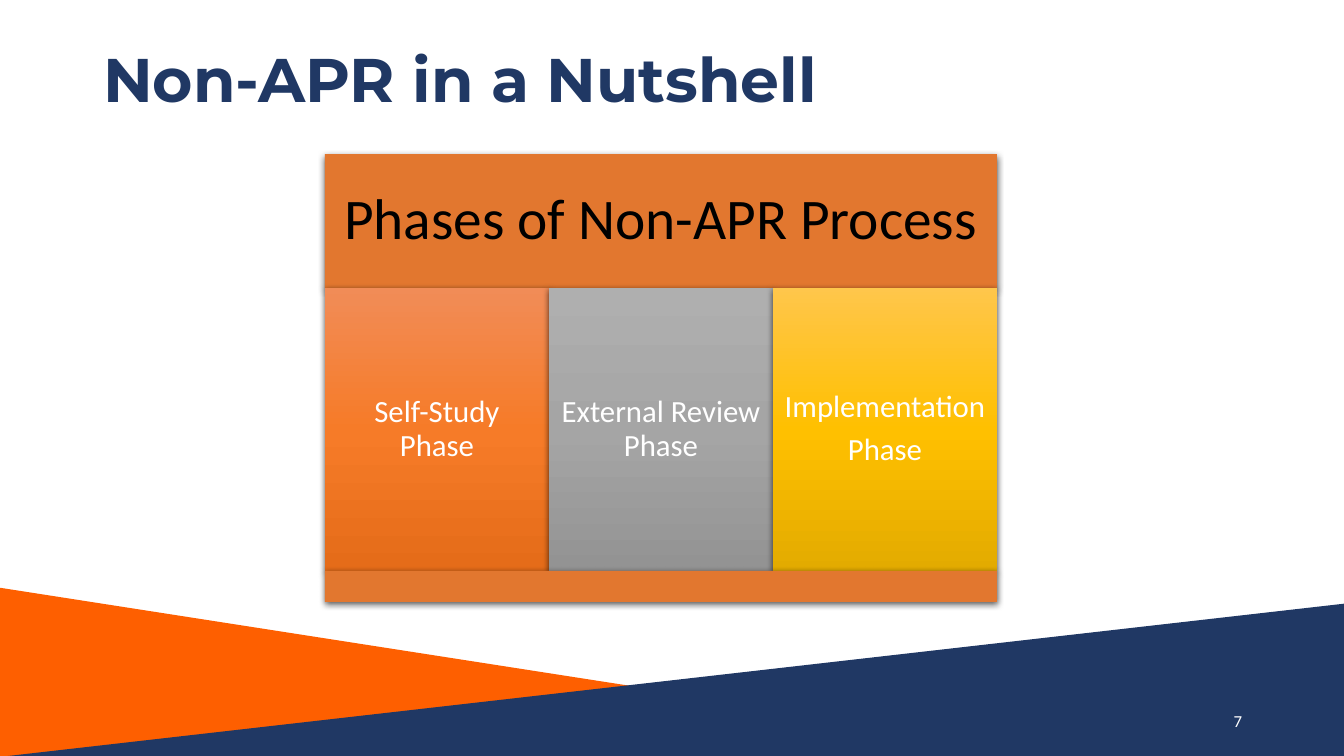
from copy import deepcopy

from lxml import etree
from pptx import Presentation
from pptx import util as u
from pptx.dml.color import RGBColor
from pptx.enum import shapes, text
from pptx.oxml import ns

PX = 914400 / 100.8

WHITE = RGBColor(0xFF, 0xFF, 0xFF)
BLACK = RGBColor(0x00, 0x00, 0x00)
NAVY = RGBColor(0x20, 0x38, 0x64)
ORANGE = RGBColor(0xFE, 0x5F, 0x00)
BAND = RGBColor(0xE2, 0x77, 0x2F)
ORANGE_FADE = (RGBColor(0xF1, 0x8C, 0x57), RGBColor(0xF6, 0x7B, 0x28), RGBColor(0xE5, 0x6C, 0x19))
GRAY_FADE = (RGBColor(0xAF, 0xAF, 0xAF), RGBColor(0xA5, 0xA5, 0xA5), RGBColor(0x93, 0x93, 0x93))
GOLD_FADE = (RGBColor(0xFF, 0xC6, 0x4B), RGBColor(0xFF, 0xC0, 0x00), RGBColor(0xE3, 0xAB, 0x00))

PHASES = [
    ("Self-Study Phase", ORANGE_FADE),
    ("External Review Phase", GRAY_FADE),
    ("Implementation\nPhase", GOLD_FADE),
]
PANEL_LEFT, PANEL_TOP, PANEL_WIDTH = 325, 154, 672
HEADER_HEIGHT, PHASE_HEIGHT, FOOTER_HEIGHT = 134, 283, 31


def px(*lengths):
    return [u.Emu(round(length * PX)) for length in lengths]


def set_font(font, name, size, color, bold=False):
    font.name = name
    font.size = u.Pt(size)
    font.color.rgb = color
    font.bold = bold


def add_triangle(slide, box, color, apex):
    triangle = slide.shapes.add_shape(shapes.MSO_SHAPE.ISOSCELES_TRIANGLE, *px(*box))
    triangle.adjustments[0] = apex
    triangle.fill.solid()
    triangle.fill.fore_color.rgb = color
    triangle.line.fill.background()
    triangle.shadow.inherit = False


def add_shadow(block):
    block.shadow.inherit = False
    effects = block._element.spPr.find(ns.qn("a:effectLst"))
    shadow = etree.SubElement(
        effects, ns.qn("a:outerShdw"),
        blurRad=str(u.Pt(4.5)), dist=str(u.Pt(1.5)), dir="5400000", algn="ctr", rotWithShape="0",
    )
    black = etree.SubElement(shadow, ns.qn("a:srgbClr"), val=str(BLACK))
    etree.SubElement(black, ns.qn("a:alpha"), val="63000")


def fill_fade(block, colors):
    block.fill.gradient()
    block.fill.gradient_angle = 270
    stop_list = block._element.spPr.find(".//" + ns.qn("a:gsLst"))
    stop_list.insert(1, deepcopy(stop_list[0]))
    for stop, position, color in zip(block.fill.gradient_stops, (0, 0.5, 1), colors):
        stop.position = position
        stop.color.rgb = color


def add_block(slide, box, colors):
    block = slide.shapes.add_shape(shapes.MSO_SHAPE.RECTANGLE, *px(*box))
    if len(colors) == 1:
        block.fill.solid()
        block.fill.fore_color.rgb = colors[0]
    else:
        fill_fade(block, colors)
    block.line.fill.background()
    add_shadow(block)
    return block


def write_label(block, wording, size, color, inset):
    frame = block.text_frame
    frame.word_wrap = True
    frame.vertical_anchor = text.MSO_ANCHOR.MIDDLE
    frame.margin_left = frame.margin_right = frame.margin_top = frame.margin_bottom = px(inset)[0]
    frame.text = wording
    for index, paragraph in enumerate(frame.paragraphs):
        paragraph.alignment = text.PP_ALIGN.CENTER
        paragraph.line_spacing = 0.9
        if index:
            paragraph.space_before = u.Pt(7)
        set_font(paragraph.runs[0].font, "Calibri", size, color)


def write_title(slide, wording):
    title = slide.shapes.title
    title.left, title.top, title.width, title.height = px(93, 10, 1159, 146)
    frame = title.text_frame
    frame.text = wording
    frame.word_wrap = True
    frame.vertical_anchor = text.MSO_ANCHOR.MIDDLE
    paragraph = frame.paragraphs[0]
    paragraph.alignment = text.PP_ALIGN.LEFT
    paragraph.line_spacing = 0.9
    set_font(paragraph.runs[0].font, "Montserrat", 44, NAVY, bold=True)


def add_page_number(slide, number):
    page = slide.shapes.add_textbox(*px(950, 701, 302, 40))
    page.text_frame.word_wrap = True
    page.text_frame.vertical_anchor = text.MSO_ANCHOR.MIDDLE
    paragraph = page.text_frame.paragraphs[0]
    paragraph.text = number
    paragraph.alignment = text.PP_ALIGN.RIGHT
    set_font(paragraph.runs[0].font, "Calibri", 12, WHITE)


def add_phases(slide):
    header = add_block(slide, (PANEL_LEFT, PANEL_TOP, PANEL_WIDTH, HEADER_HEIGHT), [BAND])
    write_label(header, "Phases of Non-APR Process", 41, BLACK, 17)
    phase_top = PANEL_TOP + HEADER_HEIGHT
    phase_width = PANEL_WIDTH // len(PHASES)
    for index, (wording, fade) in enumerate(PHASES):
        left = PANEL_LEFT + index * phase_width
        phase = add_block(slide, (left, phase_top, phase_width, PHASE_HEIGHT), fade)
        write_label(phase, wording, 22, WHITE, 9)
    add_block(slide, (PANEL_LEFT, phase_top + PHASE_HEIGHT, PANEL_WIDTH, FOOTER_HEIGHT), [BAND])


def main():
    deck = Presentation()
    deck.slide_width, deck.slide_height = px(1344, 756)
    slide = deck.slides.add_slide(deck.slide_layouts[5])
    add_triangle(slide, (-5, 587, 1086, 169), ORANGE, 0)
    add_triangle(slide, (8, 603, 1342, 153), NAVY, 1)
    write_title(slide, "Non-APR in a Nutshell")
    add_phases(slide)
    add_page_number(slide, "7")
    deck.save("out.pptx")


if __name__ == "__main__":
    main()
